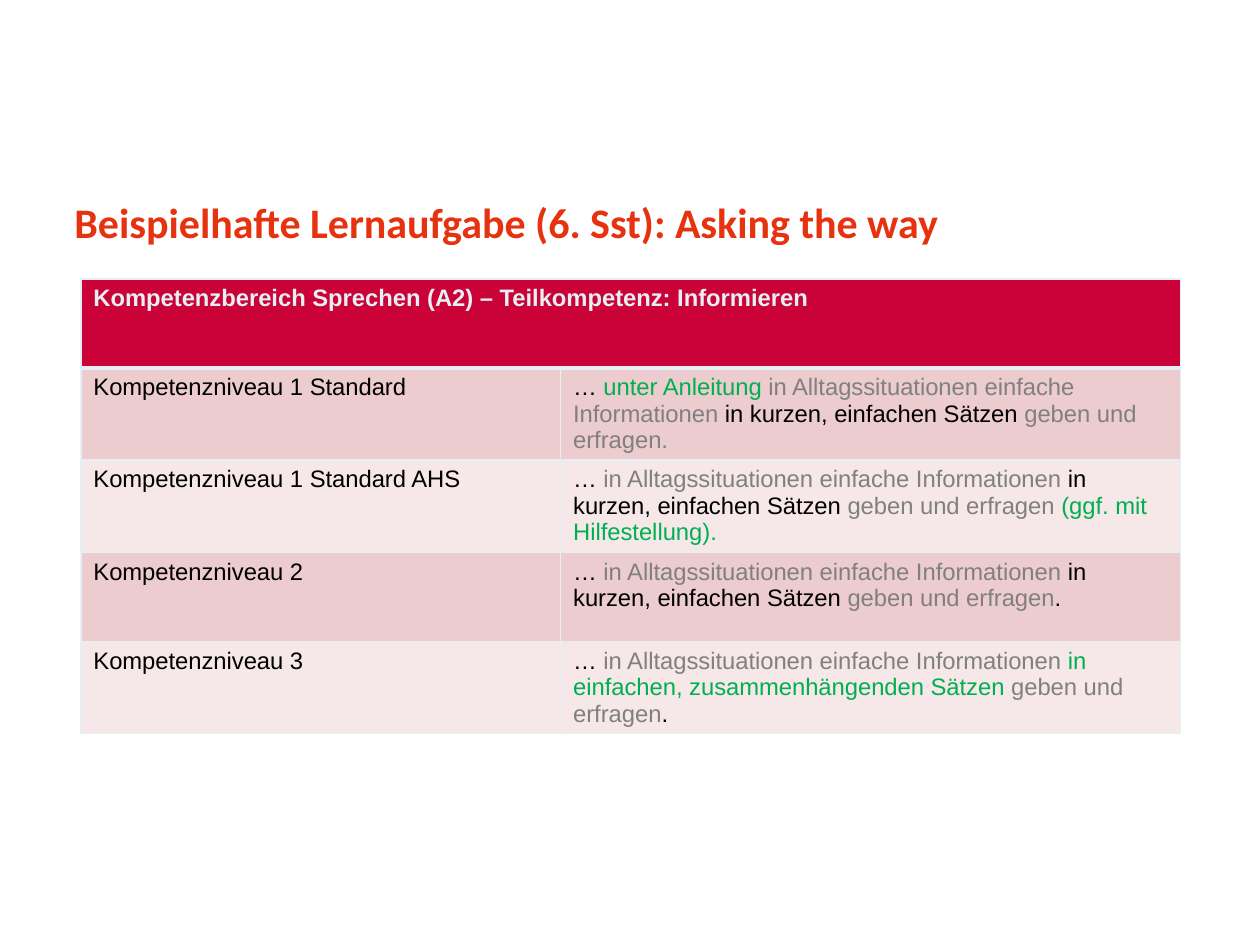
from dataclasses import dataclass

from lxml.etree import SubElement as Sub
from pptx import Presentation as Deck
from pptx.dml.color import RGBColor as Rgb
from pptx.enum.text import MSO_ANCHOR as Anchor, MSO_AUTO_SIZE as Fit, PP_ALIGN as Align
from pptx.oxml.ns import qn
from pptx.util import Cm, Pt


@dataclass(frozen=True)
class Theme:
    title: str = "E6320F"
    head: str = "CA0237"
    pale: str = "E6EFF3"
    bands: tuple = ("ECCCCE", "F6E7E8")
    black: str = "000000"
    gray: str = "808080"
    green: str = "00B050"
    big: float = 24
    small: float = 13.6
    thin: float = 1
    thick: float = 3


@dataclass(frozen=True)
class Level:
    name: str
    goal: tuple  # (text, colour) pairs


look = Theme()
LEAD = ("… ", look.black)
TOPIC = ("in Alltagssituationen einfache Informationen ", look.gray)
SHORT = ("in kurzen, einfachen Sätzen ", look.black)
GIVE = ("geben und erfragen", look.gray)
STOP = (".", look.black)

LEVELS = (
    Level("Kompetenzniveau 1 Standard", (
        LEAD, ("unter Anleitung ", look.green), TOPIC, SHORT,
        ("geben und erfragen.", look.gray))),
    Level("Kompetenzniveau 1 Standard AHS", (
        LEAD, TOPIC, SHORT, ("geben und erfragen ", look.gray),
        ("(ggf. mit Hilfestellung).", look.green))),
    Level("Kompetenzniveau 2", (LEAD, TOPIC, SHORT, GIVE, STOP)),
    Level("Kompetenzniveau 3", (
        LEAD, TOPIC, ("in einfachen, zusammenhängenden Sätzen ", look.green),
        GIVE, STOP)),
)


def write(para, text: str, *, color: str, size: float = look.small,
          face: str = "Arial", bold: bool = False) -> None:
    """Add one formatted run to a paragraph."""
    run = para.add_run()
    run.text = text
    font = run.font
    font.name, font.size, font.bold = face, Pt(size), bold
    font.color.rgb = Rgb.from_string(color)


def edge(cell, side: str, width: float) -> None:
    """Add one border line to a cell."""
    line = Sub(cell._tc.get_or_add_tcPr(), qn(f"a:ln{side}"), w=str(Pt(width)))
    Sub(Sub(line, qn("a:solidFill")), qn("a:srgbClr"), val=look.pale)


def paint(cell, color: str, top: float, base: float) -> None:
    """Set the borders, then the fill, of a cell."""
    for side, width in zip("LRTB", (look.thin, look.thin, top, base)):
        edge(cell, side, width)
    cell.fill.solid()
    cell.fill.fore_color.rgb = Rgb.from_string(color)


def draw_title(slide) -> None:
    title = slide.shapes.title
    title.left, title.top, title.width, title.height = (
        Cm(1.5), Cm(3.91), Cm(22.17), Cm(2.31))
    frame = title.text_frame
    frame.margin_left = frame.margin_right = 0
    frame.margin_top = frame.margin_bottom = 0
    frame.word_wrap, frame.auto_size = True, Fit.NONE
    frame.vertical_anchor = Anchor.TOP
    para = frame.paragraphs[0]
    para.alignment, para.line_spacing = Align.LEFT, Pt(30)
    write(para, "Beispielhafte Lernaufgabe (6. Sst): Asking the way",
          color=look.title, size=look.big, face="Calibri", bold=True)


def draw_grid(slide) -> None:
    count, high = len(LEVELS) + 1, Cm(1.8)
    grid = slide.shapes.add_table(
        count, 2, Cm(1.63), Cm(5.62), Cm(22.17), high * count).table
    for col, wide in zip(grid.columns, (9.67, 12.5)):
        col.width = Cm(wide)

    # Header across both columns
    for cell in grid.rows[0].cells:
        paint(cell, look.head, look.thin, look.thick)
    first = grid.cell(0, 0)
    first.merge(grid.cell(0, 1))
    write(first.text_frame.paragraphs[0],
          "Kompetenzbereich Sprechen (A2) – Teilkompetenz: Informieren",
          color=look.pale, bold=True)

    # One banded row per level
    for row, level in enumerate(LEVELS, 1):
        top = look.thick if row == 1 else look.thin
        texts = (((level.name, look.black),), level.goal)
        for cell, bits in zip(grid.rows[row].cells, texts):
            paint(cell, look.bands[(row - 1) % 2], top, look.thin)
            for text, color in bits:
                write(cell.text_frame.paragraphs[0], text, color=color)


def main() -> None:
    deck = Deck()
    deck.slide_width, deck.slide_height = Cm(25.4), Cm(19.05)
    slide = deck.slides.add_slide(deck.slide_layouts[5])
    draw_title(slide)
    draw_grid(slide)
    deck.save("out.pptx")


if __name__ == "__main__":
    main()
